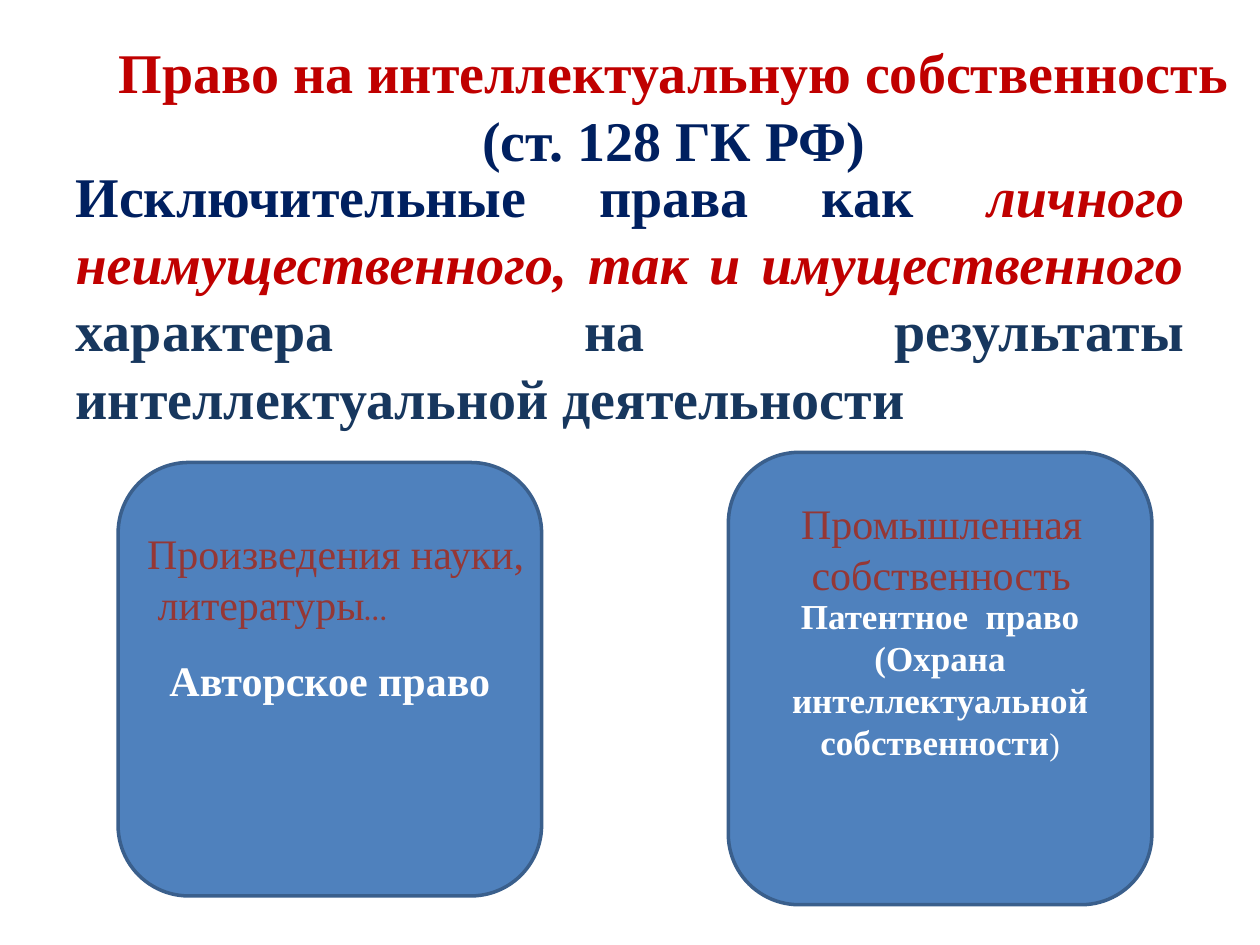
from dataclasses import dataclass

from pptx import Presentation
from pptx.dml.color import RGBColor
from pptx.enum.shapes import MSO_SHAPE
from pptx.enum.text import MSO_ANCHOR, MSO_AUTO_SIZE, PP_ALIGN
from pptx.oxml.xmlchemy import OxmlElement
from pptx.util import Pt

ROUNDED = MSO_SHAPE.ROUNDED_RECTANGLE
MIDDLE = MSO_ANCHOR.MIDDLE
NO_FIT = MSO_AUTO_SIZE.NONE
GROW = MSO_AUTO_SIZE.SHAPE_TO_FIT_TEXT
LEFT, CENTER, JUSTIFY = PP_ALIGN.LEFT, PP_ALIGN.CENTER, PP_ALIGN.JUSTIFY


@dataclass(frozen=True)
class Theme:
    font: str = "Times New Roman"
    symbol_font: str = "Calibri"
    red: str = "C00000"
    navy: str = "002060"
    slate: str = "17375E"
    brown: str = "953735"
    white: str = "FFFFFF"
    panel: str = "4F81BD"
    border: str = "3A5F8C"
    heading_size: int = 32
    label_size: int = 24
    detail_size: int = 20
    small_size: int = 18


class SlideBuilder:
    def __init__(self, slide, theme):
        self.slide = slide
        self.theme = theme

    def place(self, shape, area):
        shape.left, shape.top, shape.width, shape.height = map(Pt, area)

    def style(self, para, size, color=None, bold=False, align=LEFT):
        para.alignment = align
        para.font.name = self.theme.font
        para.font.size = Pt(size)
        para.font.bold = bold
        if color:
            para.font.color.rgb = RGBColor.from_string(color)

    def span(self, para, text, color=None, **font):
        span = para.add_run()
        span.text = text
        if color:
            span.font.color.rgb = RGBColor.from_string(color)
        for name, value in font.items():
            setattr(span.font, name, value)

    def indent(self, para, points):
        properties = para._p.get_or_add_pPr()
        properties.set("marL", str(Pt(points)))
        properties.set("indent", "0")
        return properties

    def title(self, area, lines):
        title = self.slide.shapes.title
        self.place(title, area)
        title.text_frame.auto_size = NO_FIT
        title.text_frame.vertical_anchor = MIDDLE
        para = title.text_frame.paragraphs[0]
        self.style(para, self.theme.heading_size, bold=True, align=CENTER)
        for number, (text, color) in enumerate(lines):
            if number:
                para.add_line_break()
            self.span(para, text, color)

    def body(self, area, spans):
        body = self.slide.placeholders[1]
        self.place(body, area)
        body.text_frame.auto_size = NO_FIT
        para = body.text_frame.paragraphs[0]
        self.style(para, self.theme.heading_size, bold=True, align=JUSTIFY)
        self.indent(para, 0).append(OxmlElement("a:buNone"))
        for text, color, italic in spans:
            self.span(para, text, color, italic=italic)

    def panel(self, area, lines, size):
        panel = self.slide.shapes.add_shape(ROUNDED, *map(Pt, area))
        panel.shadow.inherit = False
        panel.fill.solid()
        panel.fill.fore_color.rgb = RGBColor.from_string(self.theme.panel)
        panel.line.color.rgb = RGBColor.from_string(self.theme.border)
        panel.line.width = Pt(2)
        frame = panel.text_frame
        frame.vertical_anchor = MIDDLE
        frame.text = "\n".join(lines)
        for para in frame.paragraphs:
            self.style(para, size, self.theme.white, True, CENTER)
        return frame.paragraphs[-1]

    def label(self, area, first, second):
        box = self.slide.shapes.add_textbox(*map(Pt, area))
        frame = box.text_frame
        frame.word_wrap = False
        frame.auto_size = GROW
        frame.text = f"{first}\n{second}"
        for para in frame.paragraphs:
            self.style(para, self.theme.label_size, self.theme.brown)
        self.indent(frame.paragraphs[-1], 6)
        return frame.paragraphs[-1]


def main():
    theme = Theme()
    deck = Presentation()
    deck.slide_width, deck.slide_height = Pt(720), Pt(540)
    page = SlideBuilder(deck.slides.add_slide(deck.slide_layouts[1]), theme)
    small = Pt(theme.small_size)

    page.title((53.3, 15.1, 663.8, 90), [
        ("Право на интеллектуальную собственность", theme.red),
        ("(ст. 128 ГК РФ)", theme.navy),
    ])
    page.body((36, 88.6, 648, 393.8), [
        ("Исключительные права как ", theme.navy, False),
        ("личного неимущественного, так и имущественного ", theme.red, True),
        ("характера на результаты интеллектуальной деятельности", theme.slate, False),
    ])

    page.panel((67.5, 264.3, 242, 247.7), ["Авторское право"], theme.label_size)
    patent = page.panel(
        (416.2, 258.5, 242, 258.5),
        ["Патентное  право", "(Охрана интеллектуальной собственности"],
        theme.detail_size,
    )
    page.span(patent, ")", size=small, bold=False)

    works = page.label((77, 298.1, 232.6, 65.5), "Произведения науки,", "литературы")
    page.span(works, "…", size=small, name=theme.symbol_font)
    page.label((450.7, 280.8, 177.1, 65.5), "Промышленная", "собственность")

    deck.save("out.pptx")


if __name__ == "__main__":
    main()
